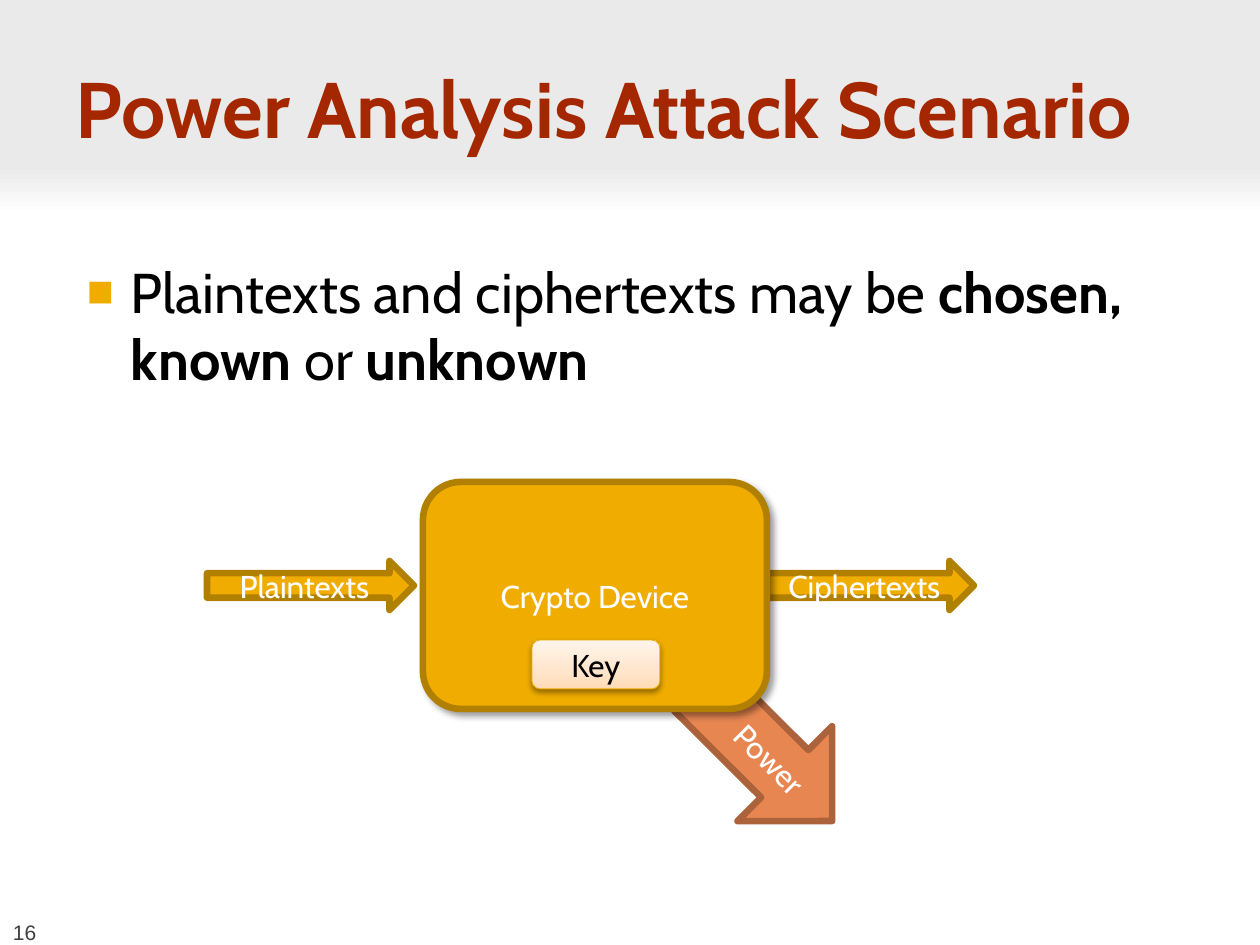
from lxml import etree
from pptx import Presentation
from pptx.dml.color import RGBColor
from pptx.enum.shapes import MSO_SHAPE as SHAPE
from pptx.enum.text import MSO_ANCHOR as ANCHOR, PP_ALIGN as ALIGN
from pptx.oxml.ns import qn
from pptx.util import Inches, Pt

PX = 7257  # EMU per px, 126 px to the inch

WHITE = RGBColor(0xFF, 0xFF, 0xFF)
BLACK = RGBColor(0x00, 0x00, 0x00)
GRAY = RGBColor(0xEA, 0xEA, 0xEA)
DARK_GRAY = RGBColor(0x3F, 0x3F, 0x3F)
RED = RGBColor(0xA4, 0x27, 0x00)
GOLD = RGBColor(0xF0, 0xAD, 0x00)
DARK_GOLD = RGBColor(0xB2, 0x80, 0x00)
KEY_LINE = RGBColor(0xEB, 0xA9, 0x00)
ORANGE = RGBColor(0xE8, 0x86, 0x51)
DARK_ORANGE = RGBColor(0xAC, 0x63, 0x3C)
BAND_FADE = [(0, WHITE), (100, GRAY)]
KEY_FADE = [(0, RGBColor(0xFF, 0xDB, 0xB5)), (35, RGBColor(0xFF, 0xE5, 0xCB)),
            (100, RGBColor(0xFF, 0xF5, 0xEB))]

prs = Presentation()
prs.slide_width, prs.slide_height = Inches(10), Inches(7.5)
s = prs.slides.add_slide(prs.slide_layouts[6])


def add_shape(kind, box, fill, angle=0):
    """Add a shape without line or shadow; a list as fill is a gradient."""
    sp = s.shapes.add_shape(kind, *[v * PX for v in box])
    sp.shadow.inherit = False
    sp.line.fill.background()
    if isinstance(fill, list):
        sp.fill.gradient()
        sp.fill.gradient_angle = angle
        stops = sp._element.spPr.find(qn("a:gradFill")).find(qn("a:gsLst"))
        stops.clear()
        for pos, color in fill:
            gs = etree.SubElement(stops, qn("a:gs"), pos=str(pos * 1000))
            etree.SubElement(gs, qn("a:srgbClr"), val=str(color))
    else:
        sp.fill.solid()
        sp.fill.fore_color.rgb = fill
    return sp


def add_text(box, insets, anchor, runs, font, size, color):
    """Add a text box with one paragraph of (text, bold) runs."""
    tf = s.shapes.add_textbox(*[v * PX for v in box]).text_frame
    tf.word_wrap = True
    tf.vertical_anchor = anchor
    tf.margin_left, tf.margin_top, tf.margin_right, tf.margin_bottom = [v * PX for v in insets]
    p = tf.paragraphs[0]
    for text, bold in runs:
        r = p.add_run()
        r.text, r.font.bold = text, bold
    p.font.name, p.font.size, p.font.color.rgb = font, Pt(size), color
    return p


# Header band
add_shape(SHAPE.RECTANGLE, (0, 0, 1260, 165), GRAY)
add_shape(SHAPE.RECTANGLE, (-1, 165, 1261, 50), BAND_FADE, 270).rotation = 180

# Title
add_text((63, 21, 1134, 173), (13, 6, 6, 6), ANCHOR.MIDDLE,
         [("Power Analysis Attack Scenario", True)], "Cabin", 45, RED)

# Bullet
p = add_text((63, 244, 1134, 638), (8, 13, 13, 6), ANCHOR.TOP,
             [("Plaintexts and ciphertexts may be ", False), ("chosen, known ", True),
              ("or ", False), ("unknown", True)], "Cabin", 32, BLACK)
pPr = p._p.get_or_add_pPr()
pPr.set("marL", str(60 * PX))
pPr.set("indent", str(-44 * PX))
bullet_color = etree.Element(qn("a:buClr"))
etree.SubElement(bullet_color, qn("a:srgbClr"), val=str(GOLD))
bullet = [bullet_color, etree.Element(qn("a:buSzPct"), val="80000"),
          etree.Element(qn("a:buFont"), typeface="Arial"),
          etree.Element(qn("a:buChar"), char="■")]
for i, el in enumerate(bullet):
    pPr.insert(i, el)

# Diagram: kind, box, fill, line, line width, text, text colour, shadow (alpha, blur, distance, angle)
diagram = [
    (SHAPE.DOWN_ARROW, (698, 659, 134, 190), ORANGE, DARK_ORANGE, 3.78, "Power", WHITE, None),
    (SHAPE.RIGHT_ARROW, (207, 561, 207, 49), GOLD, DARK_GOLD, 3.78, "Plaintexts", WHITE, None),
    (SHAPE.RIGHT_ARROW, (767, 561, 207, 49), GOLD, DARK_GOLD, 3.78, "Ciphertexts", WHITE, None),
    (SHAPE.ROUNDED_RECTANGLE, (423, 482, 344, 227), GOLD, DARK_GOLD, 3.78,
     "Crypto Device", WHITE, (40, 4, 3, 45)),
    (SHAPE.ROUNDED_RECTANGLE, (532, 640, 128, 49), KEY_FADE, KEY_LINE, 0.5,
     "Key", BLACK, (38, 3.5, 2, 90)),
]
for kind, box, fill, line, width, text, color, shadow in diagram:
    sp = add_shape(kind, box, fill, 90)
    sp.line.color.rgb, sp.line.width = line, Pt(width)
    tf = sp.text_frame
    tf.word_wrap = True
    tf.vertical_anchor = ANCHOR.MIDDLE
    p = tf.paragraphs[0]
    p.text, p.alignment = text, ALIGN.CENTER
    p.font.name, p.font.size, p.font.color.rgb = "Cabin", Pt(18), color
    if kind == SHAPE.DOWN_ARROW:
        sp.rotation = 314.9
        p.alignment = ALIGN.RIGHT
        tf._txBody.bodyPr.set("vert", "vert")
    if shadow:
        alpha, blur, dist, angle = shadow
        effects = sp._element.spPr.find(qn("a:effectLst"))
        outer = etree.SubElement(effects, qn("a:outerShdw"), blurRad=str(Pt(blur)),
                                 dist=str(Pt(dist)), dir=str(angle * 60000), rotWithShape="0")
        shade = etree.SubElement(outer, qn("a:srgbClr"), val=str(BLACK))
        etree.SubElement(shade, qn("a:alpha"), val=str(alpha * 1000))

# Slide number
add_text((0, 907, 101, 38), (13, 6, 13, 0), ANCHOR.BOTTOM, [("16", False)], "Arial", 12, DARK_GRAY)

prs.save("out.pptx")
